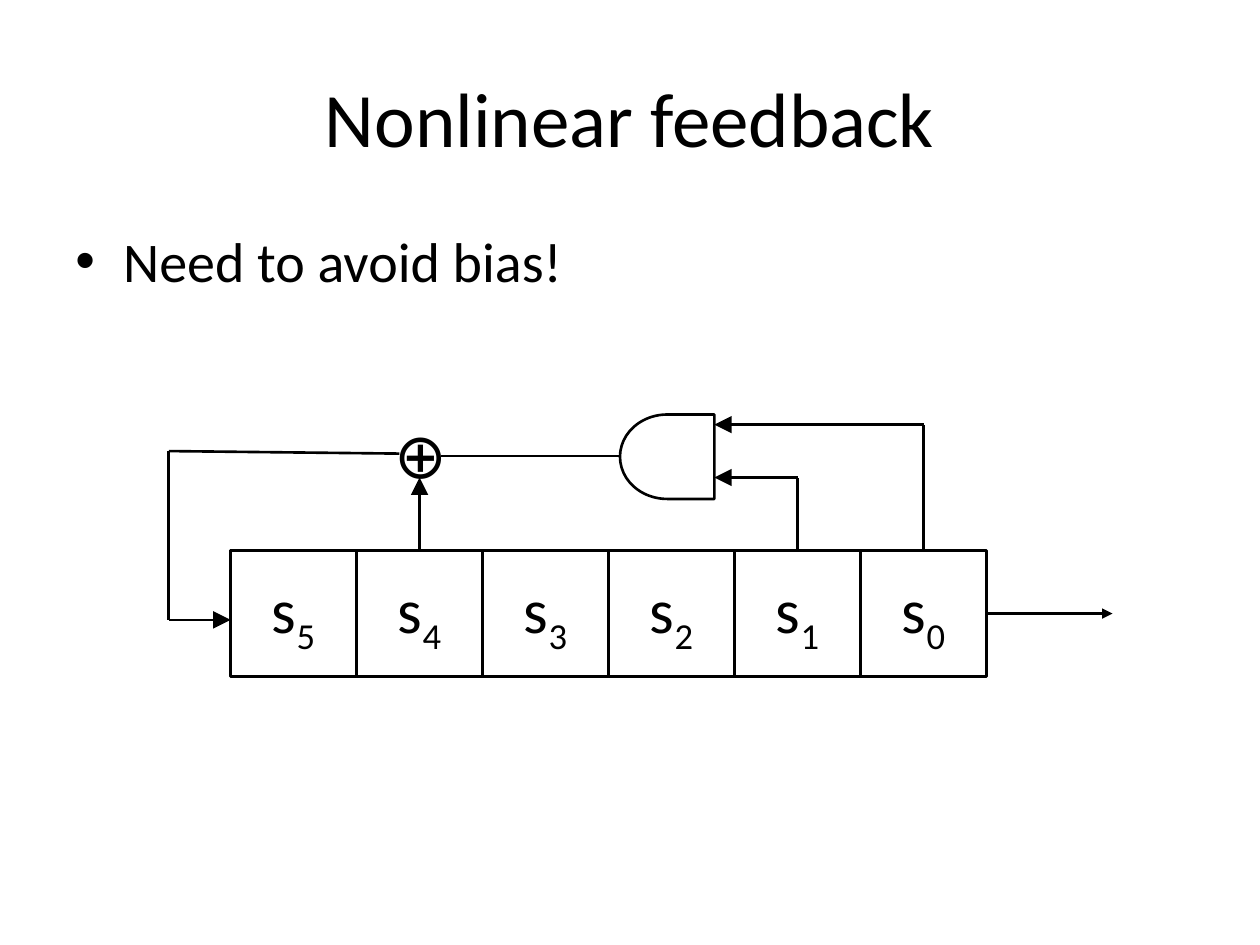
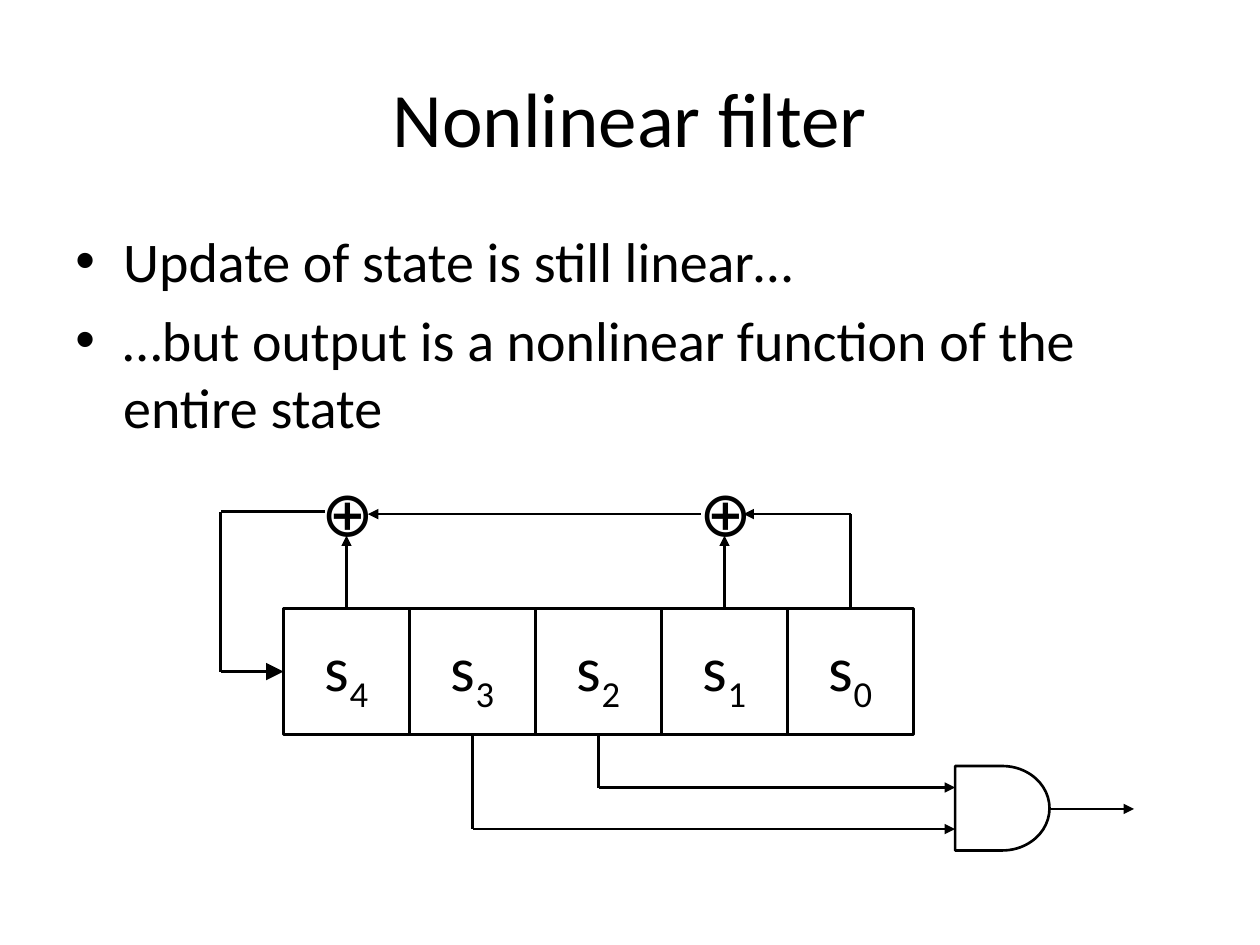
from dataclasses import dataclass
from itertools import pairwise
from lxml.etree import SubElement
from pptx import Presentation
from pptx.dml.color import RGBColor
from pptx.enum.shapes import MSO_CONNECTOR, MSO_SHAPE
from pptx.enum.text import MSO_ANCHOR, PP_ALIGN
from pptx.oxml.ns import qn
from pptx.util import Inches, Pt

BLACK = RGBColor(0x00, 0x00, 0x00)
FONT = "Calibri"
LINE_WIDTH = Pt(1.5)
TITLE_SIZE, BODY_SIZE, SYMBOL_SIZE = Pt(44), Pt(32), Pt(36)
CELL = 1.0
GATE_WIDTH, GATE_HEIGHT = 0.75, 0.67
XOR_WIDTH, XOR_HEIGHT = 0.59, 0.71
TOP, LEFT, BOTTOM, RIGHT = range(4)
TOLERANCE = 0.01

Point = tuple[float, float]


@dataclass
class Register:
    left: float
    top: float
    count: int

    def middle(self, bit: int) -> float:
        """Horizontal centre of the cell that holds the given state bit."""
        return self.left + (self.count - bit - 0.5) * CELL


@dataclass
class Gate:
    left: float
    top: float
    rotation: int = 0


@dataclass
class Wire:
    points: list[Point]
    arrow: str = ""  # size of the head at the last point: "med", "lg" or none


@dataclass
class Circuit:
    title: str
    bullets: list[str]
    body_height: float
    register: Register
    gate: Gate
    xor_bits: list[int]
    xor_top: float
    wires: list[Wire]


def style_font(span, size) -> None:
    for name, value in {"name": FONT, "size": size}.items():
        setattr(span.font, name, value)
    span.font.color.rgb = BLACK


def style_outline(shape) -> None:
    shape.shadow.inherit = False
    shape.fill.background()
    shape.line.color.rgb = BLACK
    shape.line.width = LINE_WIDTH


def add_span(para, text: str, size):
    span = para.add_run()
    span.text = text
    style_font(span, size)
    return span


def add_title(page, text: str) -> None:
    title = page.shapes.title
    place = {"left": 0.5, "top": 0.3, "width": 9, "height": 1.25}
    for name, value in place.items():
        setattr(title, name, Inches(value))
    title.text_frame.vertical_anchor = MSO_ANCHOR.MIDDLE
    para = title.text_frame.paragraphs[0]
    para.alignment = PP_ALIGN.CENTER
    add_span(para, text, TITLE_SIZE)


def add_bullets(page, bullets: list[str], height: float) -> None:
    box = page.shapes.add_textbox(Inches(0.5), Inches(1.75), Inches(9), Inches(height))
    frame = box.text_frame
    frame.word_wrap = True
    for index, text in enumerate(bullets):
        para = frame.add_paragraph() if index else frame.paragraphs[0]
        para.space_before = Pt(6.4)
        properties = para._p.get_or_add_pPr()
        properties.set("marL", str(Inches(0.38)))
        properties.set("indent", str(Inches(-0.38)))
        SubElement(properties, qn("a:buFont"), typeface="Arial")
        SubElement(properties, qn("a:buChar"), char="•")
        add_span(para, text, BODY_SIZE)


def add_register(page, register: Register) -> dict:
    """Draw the cells and return each connection point with its cell and side."""
    sites = {}
    for bit in reversed(range(register.count)):
        middle = register.middle(bit)
        left, top = middle - CELL / 2, register.top
        cell = page.shapes.add_shape(
            MSO_SHAPE.RECTANGLE, Inches(left), Inches(top), Inches(CELL), Inches(CELL)
        )
        style_outline(cell)
        cell.text_frame.vertical_anchor = MSO_ANCHOR.MIDDLE
        para = cell.text_frame.paragraphs[0]
        para.alignment = PP_ALIGN.CENTER
        add_span(para, "s", SYMBOL_SIZE)
        subscript = add_span(para, str(bit), SYMBOL_SIZE)
        subscript._r.get_or_add_rPr().set("baseline", "-25000")
        sites |= {
            (middle, top): (cell, TOP),
            (left, top + CELL / 2): (cell, LEFT),
            (middle, top + CELL): (cell, BOTTOM),
            (left + CELL, top + CELL / 2): (cell, RIGHT),
        }
    return sites


def add_gate(page, gate: Gate) -> None:
    shape = page.shapes.add_shape(
        MSO_SHAPE.FLOWCHART_DELAY,
        Inches(gate.left), Inches(gate.top), Inches(GATE_WIDTH), Inches(GATE_HEIGHT),
    )
    style_outline(shape)
    shape.rotation = gate.rotation


def add_xor(page, middle: float, top: float) -> None:
    box = page.shapes.add_textbox(
        Inches(middle - XOR_WIDTH / 2), Inches(top), Inches(XOR_WIDTH), Inches(XOR_HEIGHT)
    )
    box.text_frame.word_wrap = False
    add_span(box.text_frame.paragraphs[0], "⊕", SYMBOL_SIZE)


def join(connect, point: Point, sites: dict) -> None:
    """Attach a connector end to the cell side whose middle it touches."""
    for site, (cell, side) in sites.items():
        if all(abs(a - b) < TOLERANCE for a, b in zip(site, point)):
            connect(cell, side)
            return


def add_wire(page, wire: Wire, sites: dict) -> None:
    for start, end in pairwise(wire.points):
        connector = page.shapes.add_connector(
            MSO_CONNECTOR.STRAIGHT, *(Inches(value) for value in start + end)
        )
        connector.line.color.rgb = BLACK
        connector.line.width = LINE_WIDTH
        join(connector.begin_connect, start, sites)
        join(connector.end_connect, end, sites)
        if wire.arrow and end == wire.points[-1]:
            SubElement(connector.line._get_or_add_ln(), qn("a:tailEnd"),
                       type="triangle", w=wire.arrow, len=wire.arrow)
        SubElement(connector._element.spPr, qn("a:effectLst"))


def add_circuit(deck, circuit: Circuit) -> None:
    page = deck.slides.add_slide(deck.slide_layouts[5])
    add_title(page, circuit.title)
    add_bullets(page, circuit.bullets, circuit.body_height)
    sites = add_register(page, circuit.register)
    add_gate(page, circuit.gate)
    for bit in circuit.xor_bits:
        add_xor(page, circuit.register.middle(bit), circuit.xor_top)
    for wire in circuit.wires:
        add_wire(page, wire, sites)


def feedback_circuit() -> Circuit:
    register = Register(1.83, 4.37, 6)
    x, top = register.middle, register.top
    return Circuit(
        "Nonlinear feedback", ["Need to avoid bias!"], 0.92,
        register, Gate(4.92, 3.29, rotation=180), [4], 3.25,
        [
            Wire([(7.83, 4.87), (8.83, 4.87)], "med"),
            Wire([(x(1), top), (x(1), 3.79), (5.67, 3.79)], "lg"),
            Wire([(x(0), top), (x(0), 3.37), (5.67, 3.37)], "lg"),
            Wire([(x(4), top), (x(4), 3.79)], "lg"),
            Wire([(4.92, 3.62), (3.5, 3.62)]),
            Wire([(3.17, 3.6), (1.34, 3.58), (1.34, 4.92), (1.83, 4.92)], "lg"),
        ],
    )


def filter_circuit() -> Circuit:
    register = Register(2.25, 4.83, 5)
    x, top = register.middle, register.top
    bottom = top + CELL
    return Circuit(
        "Nonlinear filter",
        ["Update of state is still linear…",
         "…but output is a nonlinear function of the entire state"], 1.92,
        register, Gate(7.58, 6.08), [4, 1], 3.71,
        [
            Wire([(2.58, 4.06), (1.75, 4.06), (1.75, 5.33), (2.25, 5.33)], "lg"),
            Wire([(x(0), top), (x(0), 4.08), (5.9, 4.08)], "med"),
            Wire([(5.56, 4.08), (2.92, 4.08)], "med"),
            *(Wire([(x(bit), top), (x(bit), 4.25)], "med") for bit in (4, 1)),
            *(Wire([(x(bit), bottom), (x(bit), y), (7.58, y)], "med")
              for bit, y in ((2, 6.25), (3, 6.58))),
            Wire([(8.33, 6.42), (9, 6.42)], "med"),
        ],
    )


def main() -> None:
    deck = Presentation()
    deck.slide_width, deck.slide_height = Inches(10), Inches(7.5)
    for circuit in (feedback_circuit(), filter_circuit()):
        add_circuit(deck, circuit)
    deck.save("out.pptx")


if __name__ == "__main__":
    main()
